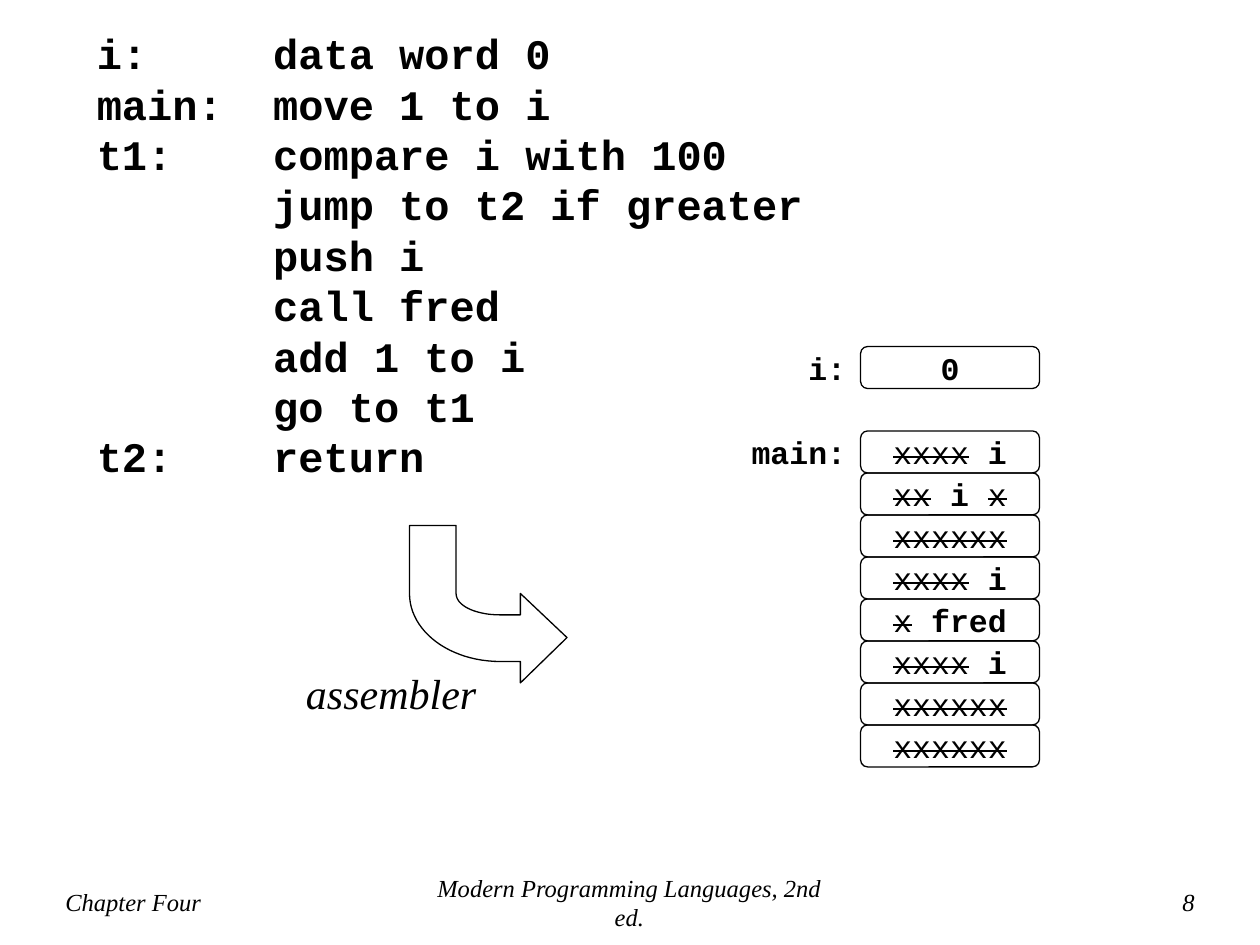
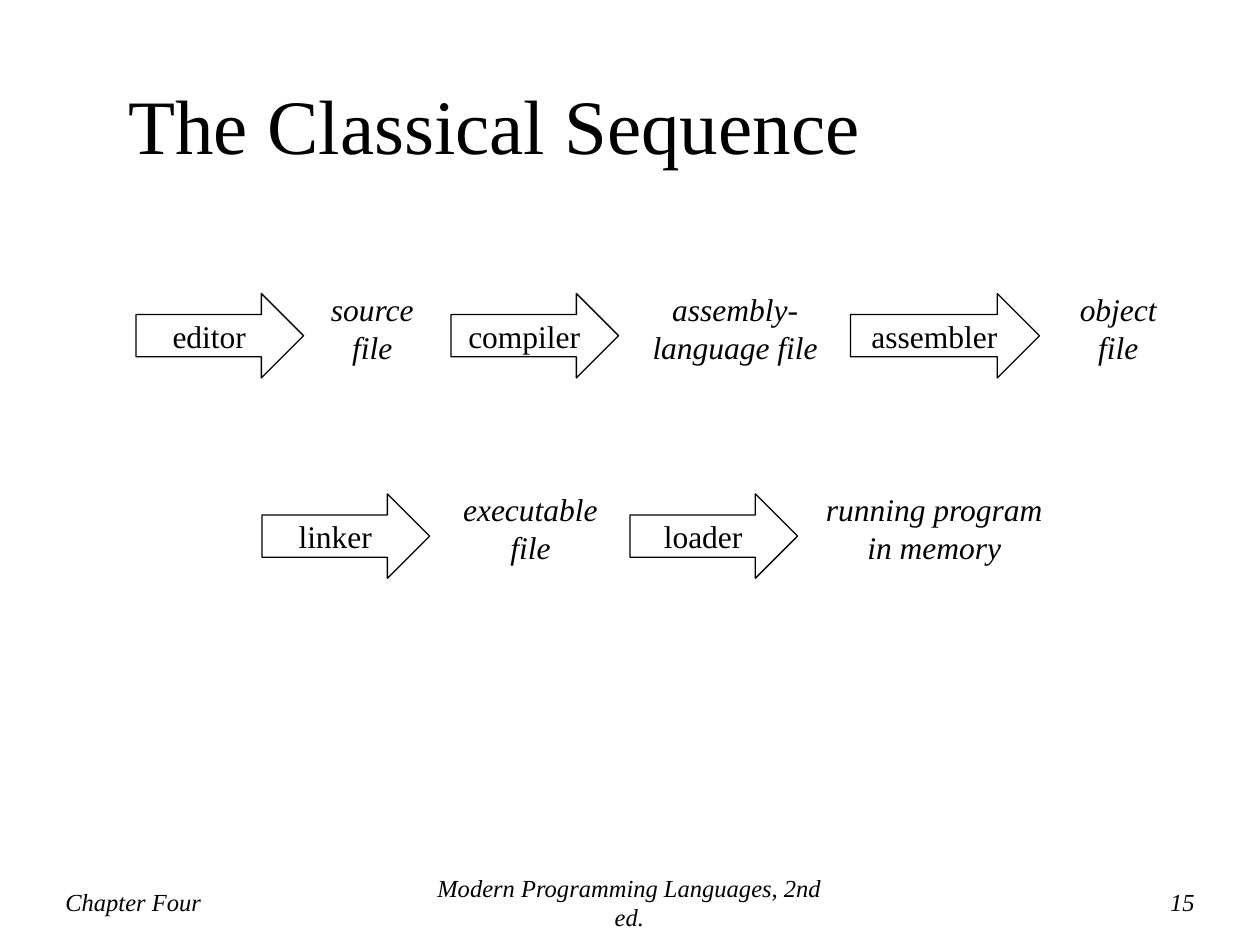
from itertools import groupby

from lxml import etree
from pptx import Presentation
from pptx.dml.color import RGBColor
from pptx.enum import shapes, text
from pptx.oxml.ns import qn
from pptx.util import Inches, Pt

COLOURS = {"ink": "000000", "paper": "FFFFFF"}
SERIF, MONO = "Times New Roman", "Courier New"
LEFT, CENTRE, RIGHT = text.PP_ALIGN.LEFT, text.PP_ALIGN.CENTER, text.PP_ALIGN.RIGHT
TOP, MIDDLE = text.MSO_ANCHOR.TOP, text.MSO_ANCHOR.MIDDLE
ROUNDED = shapes.MSO_SHAPE.ROUNDED_RECTANGLE
ARROW = shapes.MSO_SHAPE.RIGHT_ARROW
TITLE_ONLY, BLANK = 5, 6
FOOTERS = [(0.42, 2.25, LEFT, "Chapter Four"),
           (3.33, 3.33, CENTRE, "Modern Programming Languages, 2nd ed.")]

LISTING = [("i:", "data word 0"), ("main:", "move 1 to i"),
           ("t1:", "compare i with 100"), ("", "jump to t2 if greater"),
           ("", "push i"), ("", "call fred"), ("", "add 1 to i"),
           ("", "go to t1"), ("t2:", "return")]
ORDER_COLUMN = 1.4

MEMORY_LEFT, CELL_WIDTH, CELL_HEIGHT = 6.83, 1.42, 1 / 3
DATA_TOP, MAIN_TOP = 2.75, 3.42
MAIN_CELLS = ["xxxx i", "xx i x", "xxxxxx", "xxxx i",
              "x fred", "xxxx i", "xxxxxx", "xxxxxx"]

# Each step: arrow left, arrow width, tool; file left, file width, file lines
STEP_ROWS = {
    2.33: [(1.08, 1.33, "editor", 2.33, 1.25, ["source", "file"]),
           (3.58, 1.33, "compiler", 5, 1.67, ["assembly-", "language file"]),
           (6.75, 1.5, "assembler", 8.25, 1.25, ["object", "file"])],
    3.92: [(2.08, 1.33, "linker", 3.5, 1.42, ["executable", "file"]),
           (5, 1.33, "loader", 6.33, 2.17, ["running program", "in memory"])],
}


def bezier(start, first, second, end, steps=24):
    """Return points along a cubic curve, leaving out its start."""
    points = []
    for step in range(1, steps + 1):
        t = step / steps
        weights = ((1 - t) ** 3, 3 * t * (1 - t) ** 2, 3 * t * t * (1 - t), t ** 3)
        points.append(tuple(sum(w * p for w, p in zip(weights, axis))
                            for axis in zip(start, first, second, end)))
    return points


class Deck:
    def __init__(self):
        self.show = Presentation()
        self.show.slide_width, self.show.slide_height = Inches(10), Inches(7.5)
        self.page = None

    def new_page(self, number, title=None):
        layout = self.show.slide_layouts[TITLE_ONLY if title else BLANK]
        self.page = self.show.slides.add_slide(layout)
        self.page.background.fill.solid()
        self.page.background.fill.fore_color.rgb = RGBColor.from_string(COLOURS["paper"])
        if title:
            box = self.page.shapes.title
            box.left, box.top = Inches(0.92), Inches(0.38)
            box.width, box.height = Inches(8.5), Inches(1.21)
            self.put_text(box, [title], 44, align=LEFT, anchor=MIDDLE)
        for left, width, align, words in FOOTERS + [(7.5, 2.08, RIGHT, str(number))]:
            self.text_box(left, 6.91, width, 0.5, [words], 14,
                          align=align, anchor=MIDDLE, italic=True)

    def span(self, para, words, size, font=SERIF, bold=False, italic=False, strike=False):
        span = para.add_run()
        span.text = words
        span.font.name, span.font.size = font, Pt(size)
        span.font.bold, span.font.italic = bold, italic
        span.font.color.rgb = RGBColor.from_string(COLOURS["ink"])
        if strike:
            span._r.get_or_add_rPr().set("strike", "sngStrike")

    def paragraphs(self, box, count, align, anchor):
        """Prepare the text frame and return its paragraphs."""
        frame = box.text_frame
        frame.word_wrap, frame.vertical_anchor = True, anchor
        frame.auto_size = text.MSO_AUTO_SIZE.NONE
        while len(frame.paragraphs) < count:
            frame.add_paragraph()
        for para in frame.paragraphs:
            para.alignment = align
        return frame.paragraphs

    def put_text(self, box, lines, size, align=CENTRE, anchor=TOP, **style):
        for para, line in zip(self.paragraphs(box, len(lines), align, anchor), lines):
            self.span(para, line, size, **style)

    def text_box(self, left, top, width, height, lines, size, **style):
        box = self.page.shapes.add_textbox(*map(Inches, (left, top, width, height)))
        self.put_text(box, lines, size, **style)

    def outline(self, shape, visible=True):
        shape.shadow.inherit = False
        shape.fill.background()
        if visible:
            shape.line.color.rgb = RGBColor.from_string(COLOURS["ink"])
            shape.line.width = Pt(0.75)
        else:
            shape.line.fill.background()
        return shape

    def shape(self, kind, left, top, width, height, visible=True):
        shape = self.page.shapes.add_shape(kind, *map(Inches, (left, top, width, height)))
        return self.outline(shape, visible)

    def listing(self, left, top, width, height, lines):
        """Set labels and instructions in two columns."""
        box = self.page.shapes.add_textbox(*map(Inches, (left, top, width, height)))
        for para, (label, order) in zip(self.paragraphs(box, len(lines), LEFT, TOP), lines):
            stops = etree.SubElement(para._p.get_or_add_pPr(), qn("a:tabLst"))
            etree.SubElement(stops, qn("a:tab"), pos=str(Inches(ORDER_COLUMN)), algn="l")
            self.span(para, f"{label}\t{order}", 24, MONO, bold=True)

    def memory_cell(self, top, words):
        """Draw a cell in which machine code (x) is struck out and names are bold."""
        box = self.shape(ROUNDED, MEMORY_LEFT, top, CELL_WIDTH, CELL_HEIGHT)
        para = self.paragraphs(box, 1, CENTRE, MIDDLE)[0]
        for is_code, letters in groupby(words, lambda letter: letter == "x"):
            self.span(para, "".join(letters), 18, MONO, bold=not is_code, strike=is_code)

    def memory_label(self, top, words):
        box = self.shape(ROUNDED, MEMORY_LEFT - CELL_WIDTH, top, CELL_WIDTH,
                         CELL_HEIGHT, visible=False)
        self.put_text(box, [words], 18, RIGHT, MIDDLE, font=MONO, bold=True)

    def freeform(self, points):
        start, *rest = [(Inches(x), Inches(y)) for x, y in points]
        builder = self.page.shapes.build_freeform(*start)
        builder.add_line_segments(rest, close=True)
        self.outline(builder.convert_to_shape())

    def step(self, top, arrow_left, arrow_width, tool, file_left, file_width, lines):
        arrow = self.shape(ARROW, arrow_left, top, arrow_width, 0.67)
        self.put_text(arrow, [tool], 18, anchor=MIDDLE)
        self.text_box(file_left, top - 0.08, file_width, 0.71, lines, 18, italic=True)


def assembler_page(deck):
    deck.new_page(8)
    deck.listing(0.67, 0.17, 6.5, 3.69, LISTING)
    outer = bezier((3.97, 5.25), (3.57, 5.25), (3.25, 5.01), (3.25, 4.71))
    inner = bezier((3.62, 4.71), (3.62, 4.81), (3.78, 4.88), (3.97, 4.88))
    deck.freeform([(4.5, 5.06), (4.13, 5.42), (4.13, 5.25), (3.97, 5.25), *outer,
                   (3.25, 4.17), (3.62, 4.17), (3.62, 4.71), *inner,
                   (4.13, 4.88), (4.13, 4.71)])
    deck.text_box(2.33, 5.25, 1.92, 0.5, ["assembler"], 24, align=LEFT, italic=True)
    deck.memory_label(DATA_TOP, "i:")
    deck.memory_cell(DATA_TOP, "0")
    deck.memory_label(MAIN_TOP, "main:")
    for row, words in enumerate(MAIN_CELLS):
        deck.memory_cell(MAIN_TOP + row * CELL_HEIGHT, words)


def sequence_page(deck):
    deck.new_page(15, "The Classical Sequence")
    for top, steps in STEP_ROWS.items():
        for step in steps:
            deck.step(top, *step)


def main():
    deck = Deck()
    assembler_page(deck)
    sequence_page(deck)
    deck.show.save("out.pptx")


if __name__ == "__main__":
    main()
